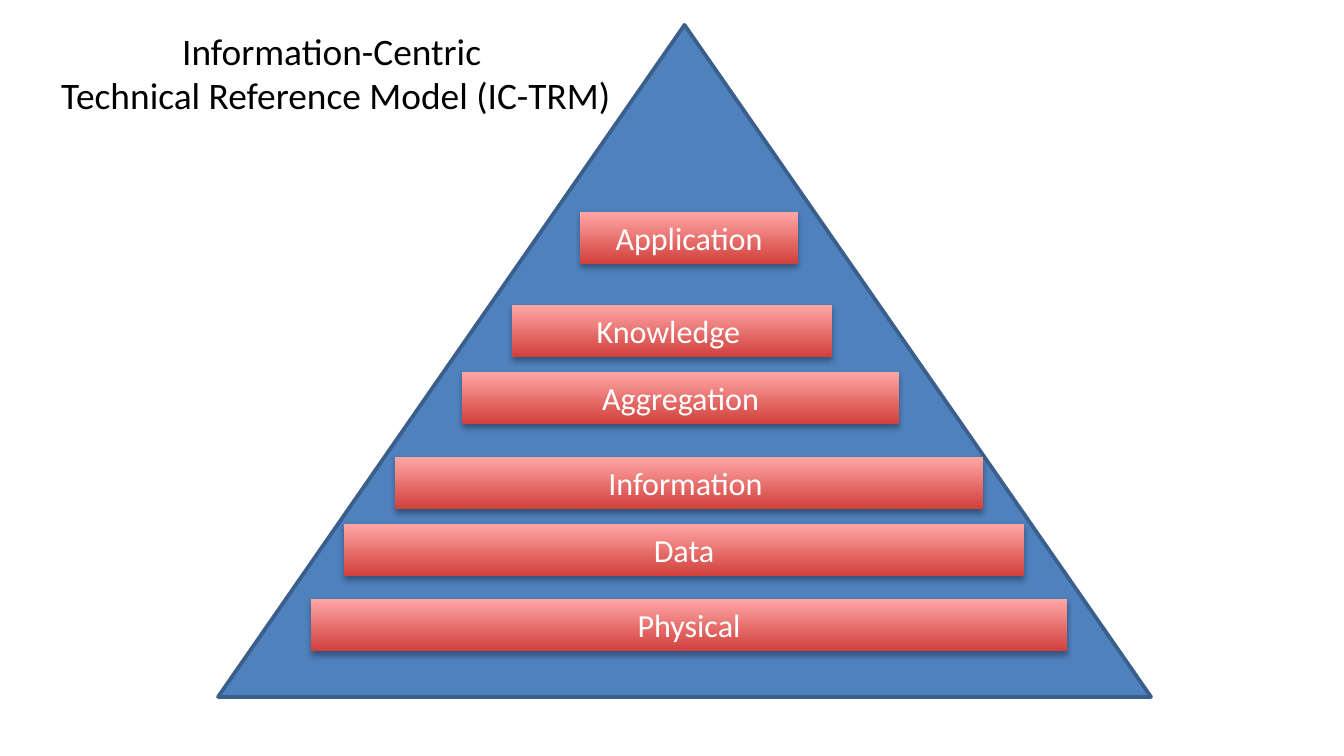
import copy

import pptx
import pptx.dml.color
import pptx.enum.shapes
import pptx.enum.text
import pptx.oxml
import pptx.oxml.ns
import pptx.util

EMU_PER_PX = 914400 / 134.4
FONT = "Calibri"
COLORS = {
    "pyramid": "4F81BD",
    "pyramid_edge": "3A5F8C",
    "bar_bottom": "D1403C",
    "bar_top": "FFA6A5",
    "shadow": "000000",
    "title": "000000",
    "label": "FFFFFF",
}
BAR_HEIGHT = 52
# label, left, top, width
LAYERS = [
    ("Physical", 311, 599, 756),
    ("Data", 344, 524, 680),
    ("Information ", 395, 457, 588),
    ("Aggregation", 462, 372, 437),
    ("Knowledge ", 512, 305, 320),
    ("Application", 580, 212, 218),
]


def px(n):
    return pptx.util.Emu(round(n * EMU_PER_PX))


def rgb(name):
    return pptx.dml.color.RGBColor.from_string(COLORS[name])


def write_text(s, text, *, size, color, anchor):
    """Fill a shape with one centred paragraph; a vertical tab breaks the line."""
    tf = s.text_frame
    tf.word_wrap = True
    tf.auto_size = pptx.enum.text.MSO_AUTO_SIZE.SHAPE_TO_FIT_TEXT
    tf.vertical_anchor = anchor
    p = tf.paragraphs[0]
    p.text = text
    p.alignment = pptx.enum.text.PP_ALIGN.CENTER
    for r in p.runs:
        r.font.name = FONT
        r.font.size = pptx.util.Pt(size)
        r.font.color.rgb = rgb(color)
    # Breaks need the run format too, or they take the size of the layout.
    for br in p._p.findall(pptx.oxml.ns.qn("a:br")):
        br.insert(0, copy.deepcopy(p.runs[0]._r.rPr))


def add_shape(slide, kind, left, top, width, height):
    s = slide.shapes.add_shape(kind, px(left), px(top), px(width), px(height))
    s.shadow.inherit = False
    return s


def add_shadow(s):
    shadow = pptx.oxml.parse_xml(
        f'<a:outerShdw {pptx.oxml.ns.nsdecls("a")} blurRad="40000" dist="23000" '
        'dir="5400000" rotWithShape="0">'
        f'<a:srgbClr val="{COLORS["shadow"]}"><a:alpha val="35000"/></a:srgbClr>'
        "</a:outerShdw>"
    )
    s._element.spPr.find(pptx.oxml.ns.qn("a:effectLst")).append(shadow)


def add_title(slide, text):
    s = slide.shapes.title
    s.left, s.top, s.width, s.height = px(0), px(21), px(672), px(104)
    write_text(s, text, size=20, color="title",
               anchor=pptx.enum.text.MSO_ANCHOR.TOP)


def add_pyramid(slide):
    kind = pptx.enum.shapes.MSO_SHAPE.ISOSCELES_TRIANGLE
    s = add_shape(slide, kind, 218, 25, 933, 672)
    s.fill.solid()
    s.fill.fore_color.rgb = rgb("pyramid")
    s.line.color.rgb = rgb("pyramid_edge")
    s.line.width = pptx.util.Pt(2)


def add_layer(slide, label, left, top, width):
    kind = pptx.enum.shapes.MSO_SHAPE.RECTANGLE
    s = add_shape(slide, kind, left, top, width, BAR_HEIGHT)
    s.fill.gradient()
    s.fill.gradient_angle = 90
    for stop, color in zip(s.fill.gradient_stops, ("bar_bottom", "bar_top")):
        stop.color.rgb = rgb(color)
    s.line.fill.background()
    add_shadow(s)
    write_text(s, label, size=17.2, color="label",
               anchor=pptx.enum.text.MSO_ANCHOR.MIDDLE)


def main():
    prs = pptx.Presentation()
    prs.slide_width, prs.slide_height = px(1344), px(756)
    slide = prs.slides.add_slide(prs.slide_layouts.get_by_name("Title Only"))
    add_title(slide, "Information-Centric \vTechnical Reference Model (IC-TRM)")
    add_pyramid(slide)
    for layer in LAYERS:
        add_layer(slide, *layer)
    prs.save("out.pptx")


if __name__ == "__main__":
    main()
